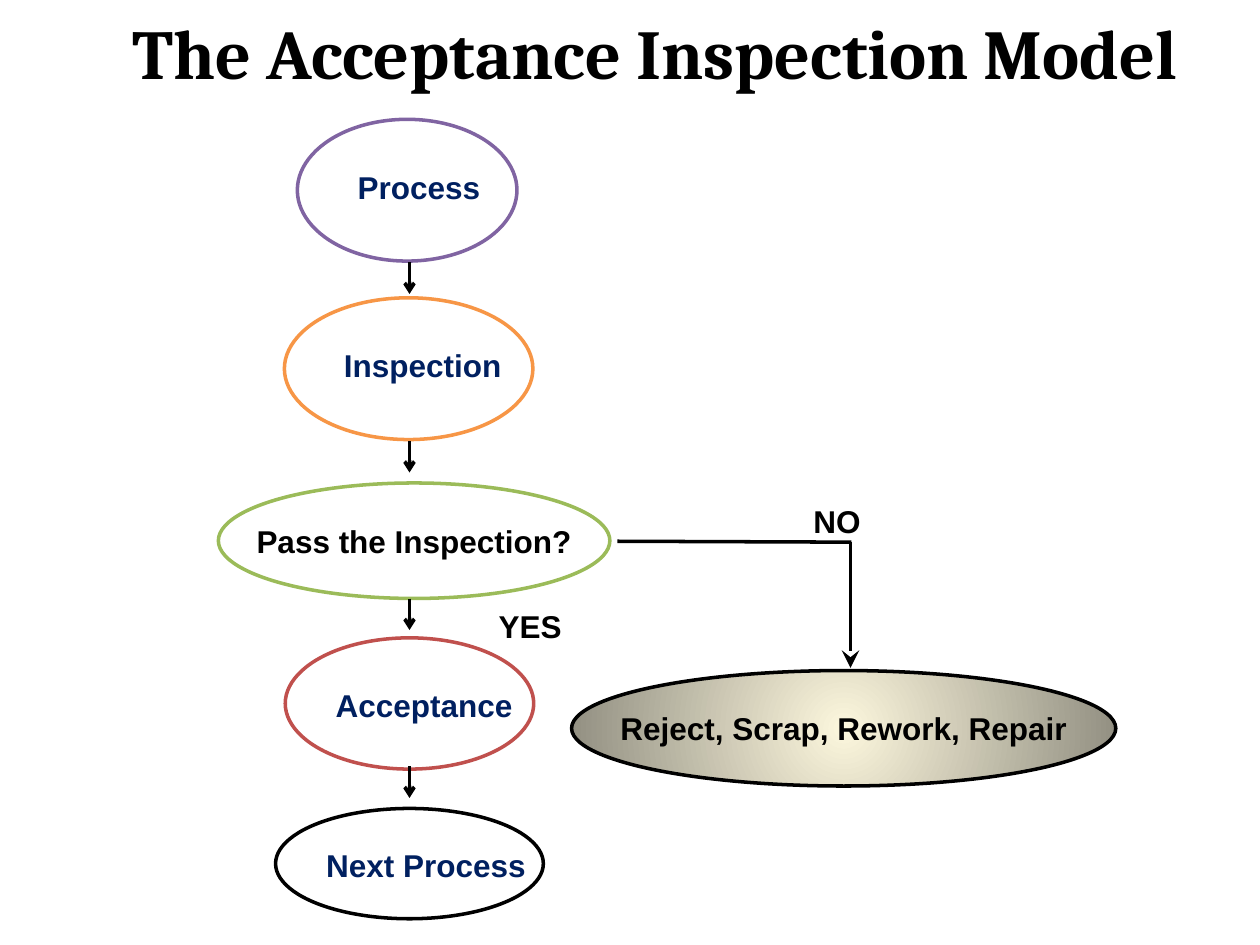
"""Build the acceptance inspection flowchart slide."""
from lxml import etree
from pptx import Presentation
from pptx import util as u
from pptx.dml.color import RGBColor
from pptx.enum import shapes, text
from pptx.oxml.ns import qn

COLORS = {
    "black": "000000", "white": "FFFFFF", "navy": "002060",
    "purple": "8064A2", "orange": "F79646", "green": "9BBB59",
    "red": "C0504D", "cream": "FCF7DD", "taupe": "918E81",
}


def write(shape, words, color="black", size=18, font="Arial", align=text.PP_ALIGN.CENTER):
    frame = shape.text_frame
    frame.text = words
    frame.word_wrap = False
    para = frame.paragraphs[0]
    para.alignment = align
    span = para.runs[0]
    span.font.name = font
    span.font.size = u.Pt(size)
    span.font.bold = True
    span.font.color.rgb = RGBColor.from_string(COLORS[color])


def connect(page, start, end, head=None, size="med"):
    line = page.shapes.add_connector(
        shapes.MSO_CONNECTOR.STRAIGHT, *[u.Pt(value) for value in (*start, *end)])
    line.line.color.rgb = RGBColor.from_string(COLORS["black"])
    line.line.width = u.Pt(2)
    if head:
        etree.SubElement(line.line._get_or_add_ln(), qn("a:tailEnd"), type=head, w=size, len=size)
    etree.SubElement(line._element.spPr, qn("a:effectLst"))


deck = Presentation()
deck.slide_width, deck.slide_height = u.Pt(720), u.Pt(540)
page = deck.slides.add_slide(deck.slide_layouts[5])

title = page.shapes.title
title.left, title.top, title.width, title.height = u.Pt(41), u.Pt(11.5), u.Pt(666.5), u.Pt(36)
write(title, "The Acceptance Inspection Model", size=40, font="Cambria")
title.text_frame.word_wrap = True
title.text_frame.vertical_anchor = text.MSO_ANCHOR.MIDDLE

ovals = [
    ("inspection", 162.5, 170.2, 142, 81, "orange"),
    ("process", 169.9, 68.2, 125.5, 81, "purple"),
    ("reject", 326.6, 383.2, 311, 66, "black"),
    ("acceptance", 163, 364.5, 142, 75, "red"),
    ("next", 157.5, 462, 153, 63, "black"),
    ("decision", 124.8, 276, 223.7, 66, "green"),
]
steps = {}
for step, left, top, width, height, outline in ovals:
    oval = page.shapes.add_shape(
        shapes.MSO_SHAPE.OVAL, u.Pt(left), u.Pt(top), u.Pt(width), u.Pt(height))
    oval.shadow.inherit = False
    oval.fill.solid()
    oval.fill.fore_color.rgb = RGBColor.from_string(COLORS["white"])
    oval.line.color.rgb = RGBColor.from_string(COLORS[outline])
    oval.line.width = u.Pt(2)
    steps[step] = oval

write(steps["decision"], "Pass the Inspection?")
write(steps["reject"], "Reject, Scrap, Rework, Repair")

fill = steps["reject"].fill
fill.gradient()
for stop, color, position in zip(fill.gradient_stops, ("cream", "taupe"), (0, 1)):
    stop.color.rgb = RGBColor.from_string(COLORS[color])
    stop.position = position
gradient = steps["reject"]._element.spPr.find(qn("a:gradFill"))
gradient.remove(gradient.find(qn("a:lin")))
circle = etree.SubElement(gradient, qn("a:path"), path="circle")
etree.SubElement(circle, qn("a:fillToRect"), l="50000", t="50000", r="50000", b="50000")

labels = [
    ("Process", 197.3, 92.5, 85, "navy"),
    ("Inspection", 189.5, 194.2, 105, "navy"),
    ("Acceptance", 184.8, 388.5, 117, "navy"),
    ("Next Process", 179.3, 480, 130, "navy"),
    ("NO", 457.7, 283.2, 44, "black"),
    ("YES", 277.8, 343.2, 65.5, "black"),
]
for words, left, top, width, color in labels:
    box = page.shapes.add_textbox(u.Pt(left), u.Pt(top), u.Pt(width), u.Pt(29))
    write(box, words, color, align=text.PP_ALIGN.LEFT)
    box.text_frame.word_wrap = color == "black"

connect(page, (486.5, 309.8), (352.8, 309.3))
connect(page, (486, 309.6), (486, 381.6), "stealth", "lg")
for top in (150, 252, 342, 438):
    connect(page, (234, top), (234, top + 18), "arrow")

deck.save("out.pptx")
